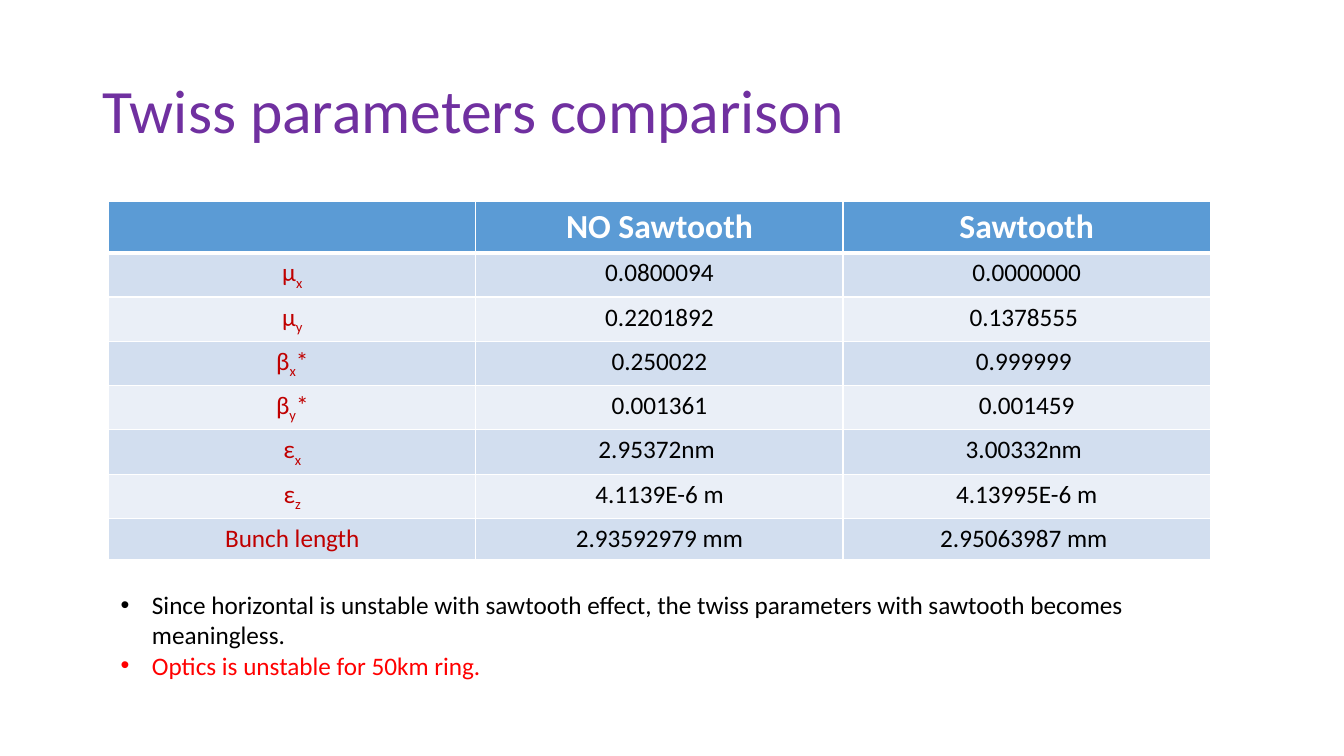
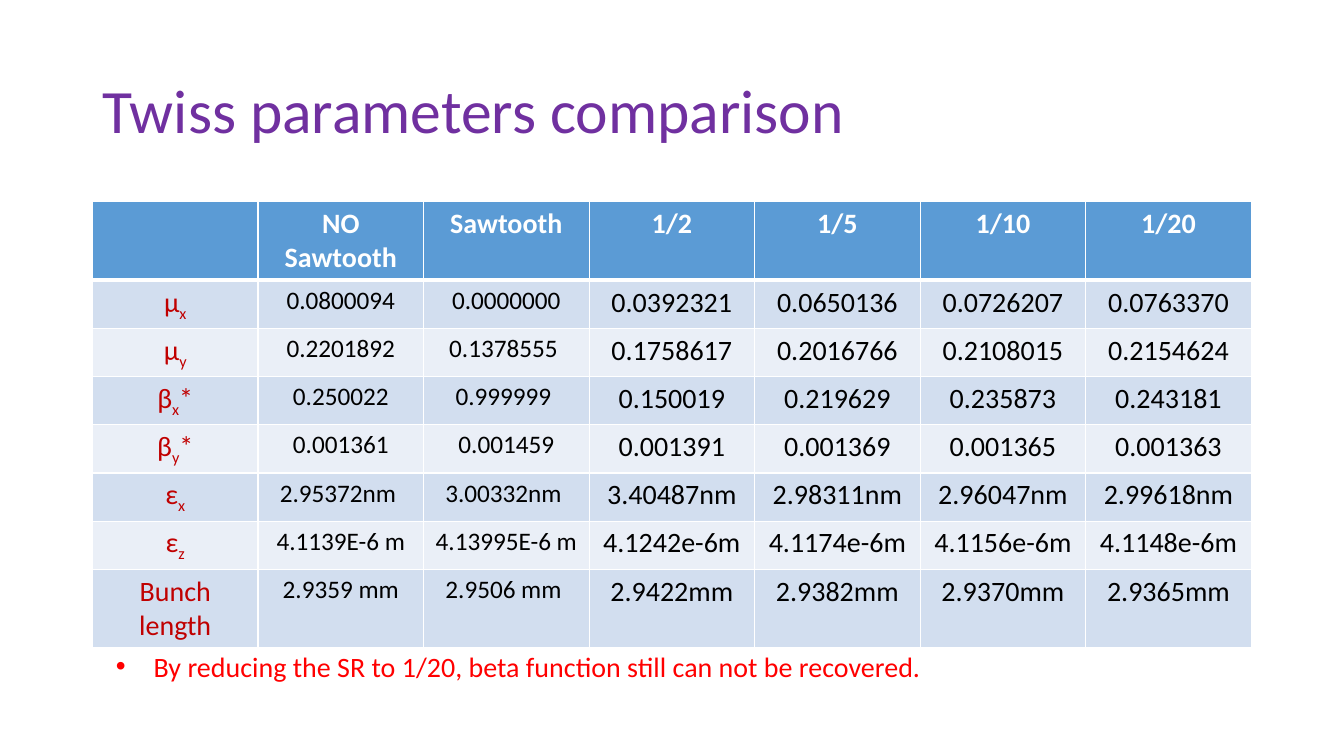
"""Two slides that compare Twiss parameters with and without sawtooth."""
from lxml.etree import SubElement as Sub
from pptx import Presentation as Deck
from pptx.dml.color import RGBColor as Rgb
from pptx.enum.text import MSO_ANCHOR as Anchor
from pptx.enum.text import MSO_AUTO_SIZE as Auto
from pptx.enum.text import PP_ALIGN as Align
from pptx.oxml.ns import qn
from pptx.util import Cm, Pt

PURPLE, RED, BLACK, WHITE = "7030A0", "FF0000", "000000", "FFFFFF"
LABEL, HEAD, BANDS = "C00000", "5B9BD5", ("D2DEEF", "EAEFF7")
TITLE = "Twiss parameters comparison"

NAMES = [("μ", "x", ""), ("μ", "y", ""), ("β", "x", "*"), ("β", "y", "*"),
         ("ε", "x", ""), ("ε", "z", ""), ("Bunch length", "", "")]
HEADS = ["NO Sawtooth", "Sawtooth"]
BASE = [
    ["0.0800094", "0.0000000"],
    ["0.2201892", "0.1378555 "],
    ["0.250022", "0.999999 "],
    ["0.001361", " 0.001459 "],
    ["2.95372nm ", "3.00332nm "],
    ["4.1139E-6 m", "4.13995E-6 m"],
]
LONG = ["2.93592979 mm", "2.95063987 mm "]
SHORT = ["2.9359 mm", "2.9506 mm "]
PARTS = ["1/2", "1/5", "1/10", "1/20"]
MORE = [
    ["0.0392321", "0.0650136", "0.0726207", "0.0763370"],
    ["0.1758617", "0.2016766", "0.2108015", "0.2154624"],
    ["0.150019", "0.219629", "0.235873", "0.243181"],
    ["0.001391", "0.001369", "0.001365", "0.001363"],
    ["3.40487nm", "2.98311nm", "2.96047nm", "2.99618nm"],
    ["4.1242e-6m", "4.1174e-6m", "4.1156e-6m", "4.1148e-6m"],
    ["2.9422mm", "2.9382mm", "2.9370mm", "2.9365mm"],
]


def paint(spot, tone):
    """Give a font colour or a solid fill its colour from a hex string."""
    spot.rgb = Rgb.from_string(tone)


def adjust(item, form):
    """Set the attributes of an item from a dict."""
    for key, val in form.items():
        setattr(item, key, val)


class Page:
    """Holds the style and the current slide."""

    font = "Calibri"

    def __init__(self, deck):
        """Start without a slide."""
        self.deck = deck
        self.slide = None

    def text(self, para, words, size, tone, bold=False, base=0):
        """Add a run of text to a paragraph."""
        run = para.add_run()
        run.text = words
        adjust(run.font, {"name": self.font, "size": Pt(size), "bold": bold})
        paint(run.font.color, tone)
        if base:
            run._r.get_or_add_rPr().set("baseline", str(base * 1000))

    def title(self, words):
        """Add a slide with a title."""
        self.slide = self.deck.slides.add_slide(self.deck.slide_layouts[5])
        head = self.slide.shapes.title
        adjust(head, {"left": Cm(2.33), "top": Cm(1.01),
                      "width": Cm(29.21), "height": Cm(3.68)})
        adjust(head.text_frame, {"vertical_anchor": Anchor.MIDDLE,
                                 "word_wrap": True, "auto_size": Auto.NONE})
        para = head.text_frame.paragraphs[0]
        adjust(para, {"alignment": Align.LEFT, "line_spacing": 0.9})
        self.text(para, words, 44, PURPLE)

    def cell(self, cell, row, runs):
        """Fill and edge a cell, and add its centred runs."""
        prop = cell._tc.get_or_add_tcPr()
        for side in "LRTB":
            thick = (row, side) in ((0, "B"), (1, "T"))
            line = Sub(prop, qn("a:ln" + side), w=str(Pt(3 if thick else 1)))
            Sub(Sub(line, qn("a:solidFill")), qn("a:srgbClr"), val=WHITE)
        cell.fill.solid()
        paint(cell.fill.fore_color, BANDS[(row - 1) % 2] if row else HEAD)
        para = cell.text_frame.paragraphs[0]
        para.alignment = Align.CENTER
        for words, *form in runs:
            if words:
                self.text(para, words, *form)

    def table(self, left, width, heads, rows, top, label, sizes):
        """Add a table with a header, a label column and value columns."""
        grid = self.slide.shapes.add_table(
            len(rows) + 1, len(heads) + 1, Cm(left), Cm(5.08),
            Cm(width), Cm(1.03 * (len(rows) + 1))).table
        for col, head in enumerate([""] + heads):
            self.cell(grid.cell(0, col), 0, [(head, top, WHITE, True)])
        for row, (name, vals) in enumerate(zip(NAMES, rows), 1):
            runs = [(part, label, LABEL, False, base)
                    for part, base in zip(name, (0, -25, 0))]
            self.cell(grid.cell(row, 0), row, runs)
            for col, (val, size) in enumerate(zip(vals, sizes), 1):
                self.cell(grid.cell(row, col), row, [(val, size, BLACK)])

    def notes(self, left, top, width, height, size, dent, items):
        """Add a box of bulleted remarks."""
        box = self.slide.shapes.add_textbox(
            Cm(left), Cm(top), Cm(width), Cm(height))
        frame = box.text_frame
        adjust(frame, {"word_wrap": True, "auto_size": Auto.SHAPE_TO_FIT_TEXT})
        for pos, (words, tone) in enumerate(items):
            para = frame.add_paragraph() if pos else frame.paragraphs[0]
            prop = para._p.get_or_add_pPr()
            prop.set("marL", str(Cm(dent)))
            prop.set("indent", str(-Cm(dent)))
            Sub(prop, qn("a:buFont"), typeface="Arial")
            Sub(prop, qn("a:buChar"), char="•")
            self.text(para, words, size, tone)


def main():
    """Build and save the slides."""
    deck = Deck()
    adjust(deck, {"slide_width": Cm(33.87), "slide_height": Cm(19.05)})
    page = Page(deck)

    page.title(TITLE)
    page.table(2.74, 27.76, HEADS, BASE + [LONG], 24, 18, [18] * 2)
    page.notes(2.79, 14.73, 27.25, 2.57, 18, 0.79, [
        ("Since horizontal is unstable with sawtooth effect, the twiss "
         "parameters with sawtooth becomes meaningless.", BLACK),
        ("Optics is unstable for 50km ring.", RED)])

    page.title(TITLE)
    rows = [one + two for one, two in zip(BASE + [SHORT], MORE)]
    page.table(2.33, 29.21, HEADS + PARTS, rows, 20, 20, [18] * 2 + [20] * 4)
    page.notes(2.67, 16.23, 28.85, 1.12, 20, 0.95, [
        ("By reducing the SR to 1/20, beta function still can not be "
         "recovered.", RED)])

    deck.save("out.pptx")


if __name__ == "__main__":
    main()
